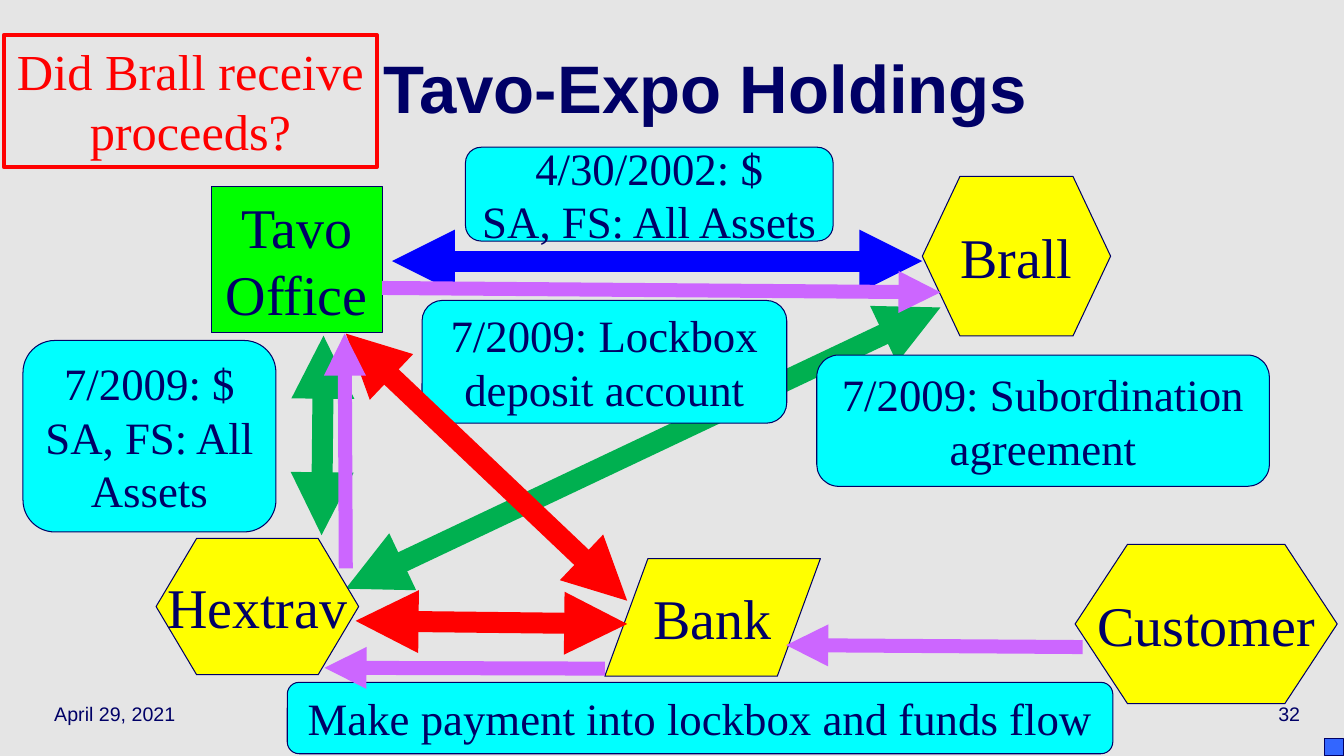
import dataclasses
import typing

import pptx
import pptx.dml.color
import pptx.enum.shapes
import pptx.enum.text
import pptx.oxml
import pptx.oxml.ns
import pptx.util

Pt = pptx.util.Pt
Kind = pptx.enum.shapes.MSO_SHAPE
Align = pptx.enum.text.PP_ALIGN
Anchor = pptx.enum.text.MSO_ANCHOR

COLORS = {
    "page": "E5E5E5", "navy": "000066", "yellow": "FFFF00", "lime": "00FF00",
    "cyan": "00FFFF", "red": "FF0000", "blue": "0000FF", "green": "00B050",
    "violet": "CC66FF", "marker": "3366FF",
}
SERIF, SANS = "Times New Roman", "Arial"


@dataclasses.dataclass
class Label:
    """Free text without a frame."""
    text: str
    left: float
    top: float
    width: float
    height: float
    size: float = 14
    align: Align = Align.LEFT
    bold: bool = False
    spacing: float = 1.0


@dataclasses.dataclass
class Box:
    """Framed shape; each line of its text is a paragraph."""
    text: str
    kind: Kind
    left: float
    top: float
    width: float
    height: float
    fill: typing.Optional[str]
    size: float = 40
    wrap: bool = True
    ink: str = "navy"
    edge: str = "navy"
    edge_width: float = 0.75
    anchor: Anchor = Anchor.MIDDLE


@dataclasses.dataclass
class Arrow:
    """Arrow with its head at the start, and at the end too if it is double."""
    start: typing.Tuple[float, float]
    end: typing.Tuple[float, float]
    color: str
    width: float = 15
    double: bool = True


def rgb(name: str) -> pptx.dml.color.RGBColor:
    return pptx.dml.color.RGBColor.from_string(COLORS[name])


def write(shape, text: str, face: str, size: float, ink: str, align: Align,
          bold: bool = False, spacing: float = 1.0) -> None:
    frame = shape.text_frame
    for index, line in enumerate(text.split("\n")):
        para = frame.add_paragraph() if index else frame.paragraphs[0]
        para.text = line
        para.alignment = align
        para.line_spacing = spacing
        para.font.name = face
        para.font.size = Pt(size)
        para.font.bold = bold
        para.font.color.rgb = rgb(ink)


def draw_label(page, label: Label) -> None:
    shape = page.shapes.add_textbox(
        Pt(label.left), Pt(label.top), Pt(label.width), Pt(label.height))
    shape.text_frame.word_wrap = True
    shape.text_frame.vertical_anchor = Anchor.MIDDLE
    write(shape, label.text, SANS, label.size, "navy", label.align,
          label.bold, label.spacing)


def draw_box(page, box: Box) -> None:
    shape = page.shapes.add_shape(
        box.kind, Pt(box.left), Pt(box.top), Pt(box.width), Pt(box.height))
    shape.shadow.inherit = False
    if box.fill:
        shape.fill.solid()
        shape.fill.fore_color.rgb = rgb(box.fill)
    else:
        shape.fill.background()
    shape.line.color.rgb = rgb(box.edge)
    shape.line.width = Pt(box.edge_width)
    if box.text:
        shape.text_frame.word_wrap = box.wrap
        shape.text_frame.vertical_anchor = box.anchor
        write(shape, box.text, SERIF, box.size, box.ink, Align.CENTER)


def draw_arrow(page, arrow: Arrow) -> None:
    line = page.shapes.add_connector(
        pptx.enum.shapes.MSO_CONNECTOR.STRAIGHT,
        *(Pt(value) for value in arrow.start + arrow.end))
    line.line.color.rgb = rgb(arrow.color)
    line.line.width = Pt(arrow.width)
    stroke = line.line._get_or_add_ln()
    for tag in ("a:headEnd", "a:tailEnd") if arrow.double else ("a:headEnd",):
        tip = pptx.oxml.xmlchemy.OxmlElement(tag)
        tip.set("type", "triangle")
        stroke.append(tip)
    line._element.spPr.append(pptx.oxml.xmlchemy.OxmlElement("a:effectLst"))


def payment(start: typing.Tuple[float, float],
            end: typing.Tuple[float, float]) -> Arrow:
    return Arrow(start, end, "violet", 10, False)


def party(text: str, kind: Kind, left: float, top: float,
          width: float, height: float) -> Box:
    return Box(text, kind, left, top, width, height, "yellow", wrap=False)


def note(text: str, left: float, top: float, width: float, height: float,
         wrap: bool = True) -> Box:
    return Box(text, Kind.FLOWCHART_ALTERNATE_PROCESS, left, top, width,
               height, "cyan", 32, wrap)


# Everything on the page, from back to front
ITEMS = [
    Arrow((247, 420.5), (671.8, 219.6), "green"),
    Label("April 29, 2021", 31.7, 491.8, 200, 36),
    Label("32", 735.8, 491.8, 200, 36, align=Align.RIGHT),
    Label("Tavo-Expo Holdings", 64, 23.8, 880, 90, 48, Align.CENTER, True, 0.7),
    party("Bank", Kind.FLOWCHART_DATA, 432, 399, 154, 84),
    Box("Tavo Office", Kind.FLOWCHART_PROCESS, 151, 133, 122, 104.5, "lime"),
    party("Brall", Kind.FLOWCHART_PREPARATION, 658.8, 126, 134.5, 114),
    Arrow((280, 186.5), (658.8, 186.5), "blue"),
    Arrow((254, 443.5), (448, 445.7), "red"),
    note("7/2009: Subordination agreement", 583.4, 253.6, 323.3, 93.8),
    note("Make payment into lockbox and funds flow", 205.2, 487.4, 589.7, 51),
    Box("Did Brall receive proceeds?", Kind.RECTANGLE, 2.9, 25, 266.4, 94.3,
        None, 36, ink="red", edge="red", edge_width=3, anchor=Anchor.TOP),
    note("7/2009: Lockbox deposit account", 301.5, 214.6, 260.5, 87.7),
    note("4/30/2002: $\nSA, FS: All Assets", 332.5, 105.2, 262.6, 67, False),
    Box("", Kind.RECTANGLE, 946, 527.8, 14, 12.2, "marker"),
    party("Customer", Kind.FLOWCHART_PREPARATION, 768, 388.8, 187.2, 113.8),
    Arrow((247, 238.3), (448, 429.1), "red"),
    party("Hextrav", Kind.FLOWCHART_PREPARATION, 111.5, 384.6, 144.7, 97.3),
    Arrow((229.7, 382.3), (231.1, 239.8), "green"),
    note("7/2009: $\nSA, FS: All Assets", 16.4, 243.2, 180.7, 136.8),
    payment((561.6, 460.8), (773.3, 462.2)),
    payment((231.8, 477), (432, 477.6)),
    payment((246.2, 238.3), (247, 406)),
    payment((671.8, 208.8), (272.9, 205.7)),
]
DRAWERS = {Label: draw_label, Box: draw_box, Arrow: draw_arrow}


def main() -> None:
    deck = pptx.Presentation()
    deck.slide_width, deck.slide_height = Pt(960), Pt(540)
    page = deck.slides.add_slide(deck.slide_layouts[6])
    page.background.fill.solid()
    page.background.fill.fore_color.rgb = rgb("page")
    for item in ITEMS:
        DRAWERS[type(item)](page, item)
    deck.save("out.pptx")


if __name__ == "__main__":
    main()
